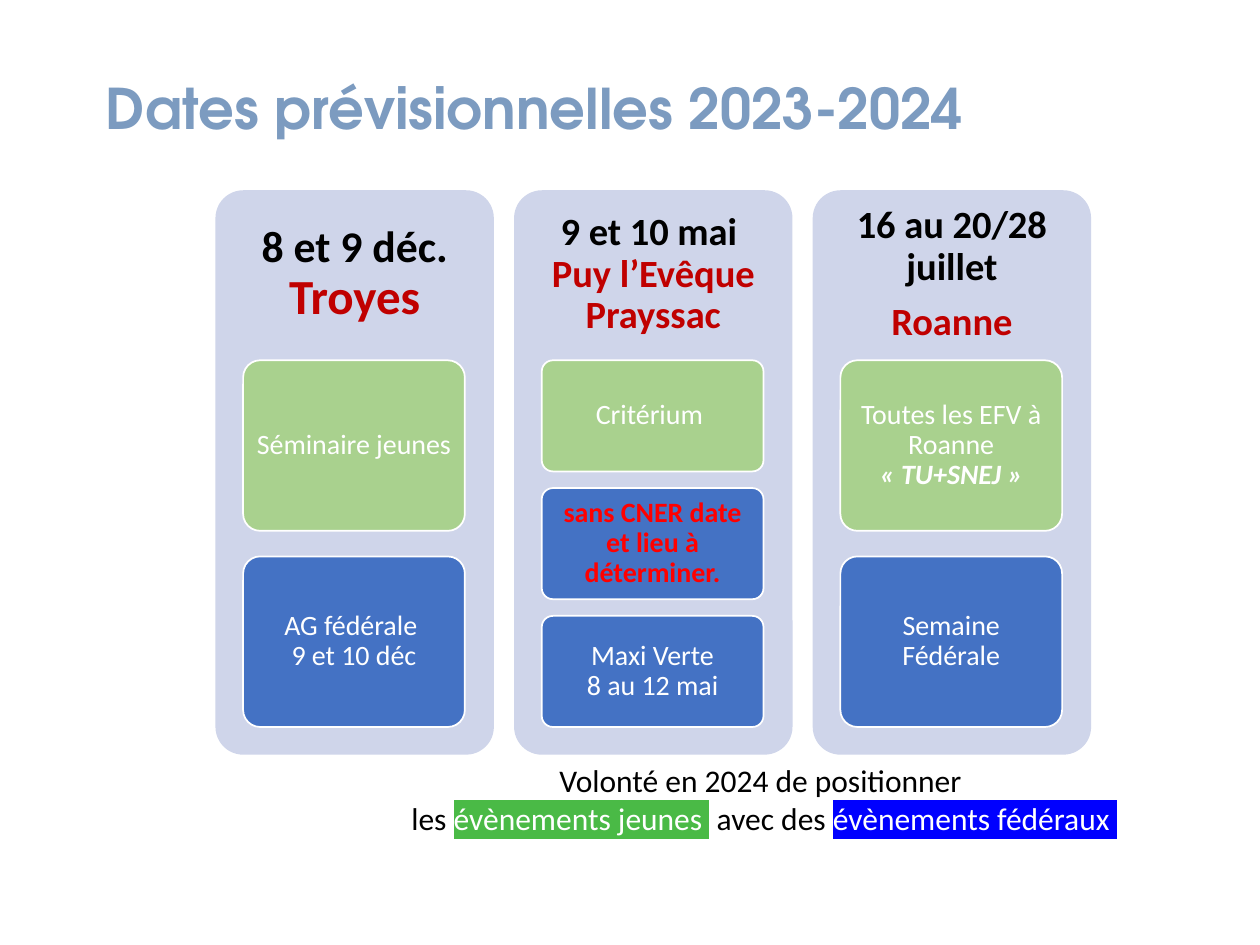
from dataclasses import dataclass

from lxml.etree import SubElement
from pptx import Presentation
from pptx.dml.color import RGBColor as Rgb
from pptx.enum.shapes import MSO_SHAPE as Shape
from pptx.enum.text import MSO_ANCHOR as Anchor, PP_ALIGN as Align
from pptx.oxml.ns import qn
from pptx.util import Inches, Pt


@dataclass(frozen=True)
class Theme:
    """Colours, fonts and type sizes of the slide."""
    steel: str = "7C9BC0"
    pale: str = "CFD5EA"
    green: str = "A9D18E"
    blue: str = "4472C4"
    white: str = "FFFFFF"
    black: str = "000000"
    wine: str = "C00000"
    red: str = "FF0000"
    lime: str = "4ABA46"
    deep: str = "0000FF"
    head: str = "TeX Gyre Adventor"
    body: str = "Calibri"
    small: int = 16
    note: int = 18
    mid: int = 22
    date: int = 25
    town: int = 28
    title: int = 32


class Deck:
    """Draws styled elements on the current slide."""

    def __init__(self, slide, theme):
        self.slide, self.theme = slide, theme

    def run(self, para, text, size, color, mark=None, **form):
        """Add a run, turning newlines into line breaks."""
        for i, part in enumerate(text.split("\n")):
            if i:
                para.add_line_break()
            if not part:
                continue
            run = para.add_run()
            run.text = part
            run.font.color.rgb = Rgb.from_string(color)
            if mark:
                fill = run.font._element.find(qn("a:solidFill"))
                light = SubElement(run.font._element, qn("a:highlight"))
                SubElement(light, qn("a:srgbClr"), val=mark)
                fill.addnext(light)
            values = {"name": self.theme.body, "size": Pt(size), **form}
            for key, value in values.items():
                setattr(run.font, key, value)

    def fill(self, frame, paras, pad=(0.1, 0.05), space=0.9, align=Align.CENTER, **form):
        """Write paragraphs, each a list of (text, size, colour, format)."""
        side, edge = map(Inches, pad)
        values = {"word_wrap": True, "vertical_anchor": Anchor.MIDDLE,
                  "margin_left": side, "margin_right": side,
                  "margin_top": edge, "margin_bottom": edge, **form}
        for key, value in values.items():
            setattr(frame, key, value)
        for i, runs in enumerate(paras):
            para = frame.add_paragraph() if i else frame.paragraphs[0]
            para.alignment, para.line_spacing = align, space
            if space < 1:
                para.space_after = Pt(round(runs[0][1] * 0.35, 1))
            for text, size, color, look in runs:
                self.run(para, text, size, color, **look)

    def title(self, text, *box):
        """Place and format the title placeholder."""
        hold = self.slide.shapes.title
        hold.left, hold.top, hold.width, hold.height = map(Inches, box)
        look = {"name": self.theme.head, "bold": True}
        self.fill(hold.text_frame, [[(text, self.theme.title, self.theme.steel, look)]],
                  align=Align.LEFT)

    def text(self, paras, *box, **form):
        """Add a text box."""
        frame = self.slide.shapes.add_textbox(*map(Inches, box)).text_frame
        self.fill(frame, paras, **form)

    def card(self, color, *box, line=None):
        """Add a rounded rectangle."""
        card = self.slide.shapes.add_shape(Shape.ROUNDED_RECTANGLE, *map(Inches, box))
        card.adjustments[0] = 0.1
        card.shadow.inherit = False
        card.fill.solid()
        card.fill.fore_color.rgb = Rgb.from_string(color)
        if line:
            card.line.color.rgb = Rgb.from_string(line)
            card.line.width = Pt(1)
        else:
            card.line.fill.background()
        return card

    def column(self, left, head, tiles):
        """Add a panel with its heading and evenly stacked tiles."""
        self.card(self.theme.pale, left, 1.51, 2.21, 4.48)
        self.text(head, left, 1.51, 2.21, 1.34, pad=(0.1, 0.1))
        count, ratio = len(tiles), 0.15
        high = 2.91 / (count + ratio * (count - 1))
        for i, runs in enumerate(tiles):
            top = 2.86 + i * high * (1 + ratio)
            color = self.theme.blue if i else self.theme.green
            tile = self.card(color, left + 0.22, top, 1.76, high, line=self.theme.white)
            self.fill(tile.text_frame, [runs], pad=(0.05, 0.03))


def main():
    """Build and save the slide."""
    show = Presentation()
    show.slide_width, show.slide_height = Inches(10), Inches(7.5)
    look = Theme()
    deck = Deck(show.slides.add_slide(show.slide_layouts[5]), look)
    bold, plain = {"bold": True}, {}

    def label(text, color=look.white, form=plain):
        return text, look.small, color, form

    deck.title("Dates prévisionnelles 2023-2024", 0.74, 0.4, 8.39, 0.97)

    columns = [
        ([[("8 et 9 déc.\n", look.date, look.black, bold),
           ("Troyes", look.town, look.wine, bold)]],
         [[label("Séminaire jeunes")],
          [label("AG fédérale \n9 et 10 déc")]]),
        ([[("9 et 10 mai \n", look.mid, look.black, bold),
           ("Puy l’Evêque Prayssac", look.mid, look.wine, bold)]],
         [[label("Critérium ")],
          [label("sans CNER date et lieu à déterminer.", look.red, bold)],
          [label("Maxi Verte\n8 au 12 mai")]]),
        ([[("16 au 20/28 juillet", look.mid, look.black, bold)],
          [("Roanne", look.mid, look.wine, bold)]],
         [[label("Toutes les EFV à Roanne\n"),
           label("« TU+SNEJ »", form={"bold": True, "italic": True})],
          [label("Semaine Fédérale")]]),
    ]
    for i, (head, tiles) in enumerate(columns):
        deck.column(1.71 + i * 2.37, head, tiles)

    deck.text([[("Volonté en 2024 de positionner \nles ", look.note, look.black, plain),
                ("évènements jeunes ", look.note, look.white, {"mark": look.lime}),
                (" avec des ", look.note, look.black, plain),
                ("évènements fédéraux ", look.note, look.white, {"mark": look.deep})]],
              3.13, 5.99, 5.87, 0.71, space=1, word_wrap=False,
              vertical_anchor=Anchor.TOP)
    show.save("out.pptx")


if __name__ == "__main__":
    main()
